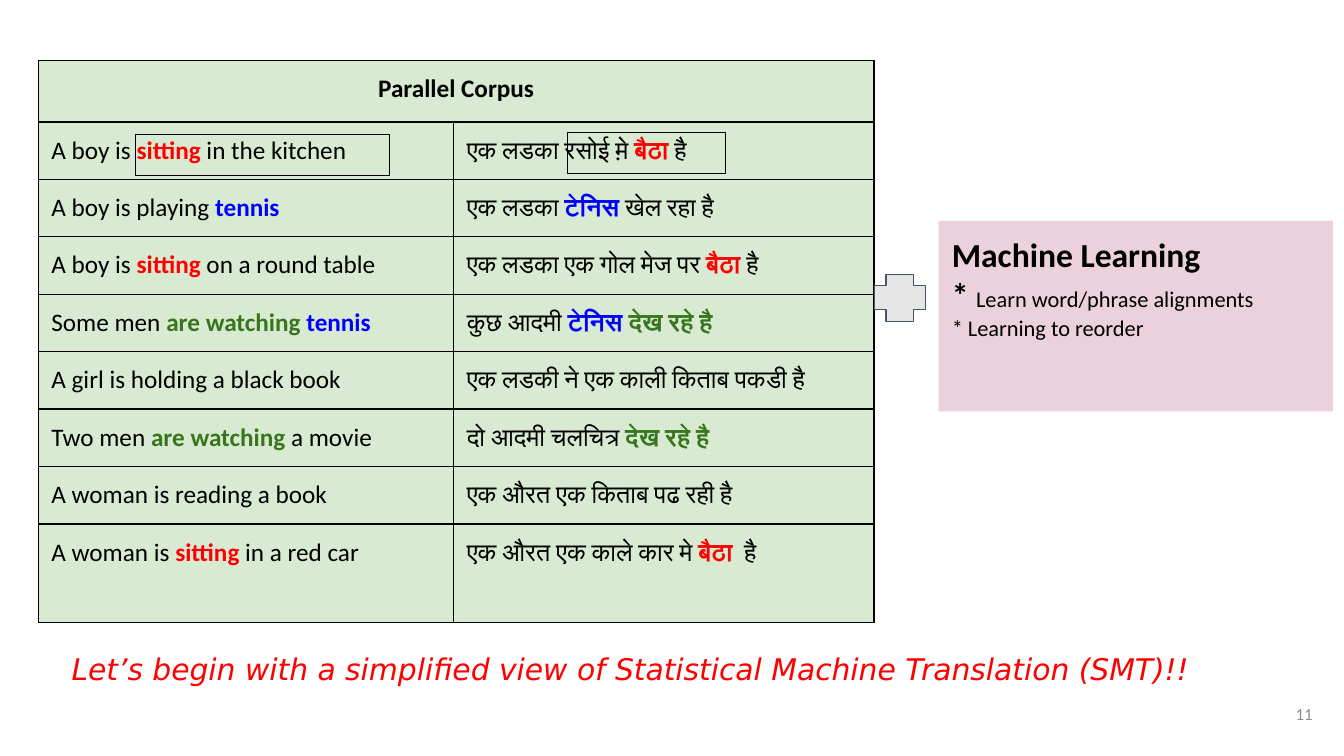
import pptx
import pptx.dml.color
import pptx.enum.shapes
import pptx.enum.text
import pptx.oxml.ns
import pptx.util
from lxml import etree

Inches = pptx.util.Inches
Pt = pptx.util.Pt
RGBColor = pptx.dml.color.RGBColor
Shape = pptx.enum.shapes.MSO_SHAPE
Align = pptx.enum.text.PP_ALIGN
Anchor = pptx.enum.text.MSO_ANCHOR
qn = pptx.oxml.ns.qn

BLACK = RGBColor(0x00, 0x00, 0x00)
RED = RGBColor(0xFF, 0x00, 0x00)
BLUE = RGBColor(0x00, 0x00, 0xFF)
GREEN = RGBColor(0x38, 0x76, 0x1D)
PALE_GREEN = RGBColor(0xD9, 0xEA, 0xD3)
PINK = RGBColor(0xEA, 0xD1, 0xDC)
LIGHT_GRAY = RGBColor(0xE7, 0xE6, 0xE6)
GRAY = RGBColor(0x8C, 0x8C, 0x8C)
SLATE = RGBColor(0x44, 0x54, 0x6A)

ALIGNED_WORDS = {
    "sitting": RED, "बैठा": RED,
    "tennis": BLUE, "टेनिस": BLUE,
    "are watching": GREEN, "देख रहे है": GREEN,
}

CORPUS = [
    ("A boy is |sitting| in the kitchen", "एक लडका रसोई मे़ |बैठा| है"),
    ("A boy is playing |tennis", "एक लडका |टेनिस |खेल रहा है"),
    ("A boy is |sitting| on a round table", "एक लडका एक गोल मेज पर |बैठा| है"),
    ("Some men |are watching |tennis", "कुछ आदमी |टेनिस |देख रहे है"),
    ("A girl is holding a black book", "एक लडकी ने एक काली किताब पकडी है"),
    ("Two men |are watching| a movie", "दो आदमी चलचित्र |देख रहे है"),
    ("A woman is reading a book", "एक औरत एक किताब पढ रही है"),
    ("A woman is |sitting| in a red car", "एक औरत एक काले कार मे |बैठा|  है"),
]


class SlideBuilder:
    font = "Calibri"
    margin = Inches(0.13)
    border_width = Pt(1)

    def __init__(self, deck):
        self.page = deck.slides.add_slide(deck.slide_layouts[6])

    def add_span(self, para, text, size, color=BLACK, bold=False, italic=False, font=None):
        span = para.add_run()
        span.text = text
        span.font.name = font or self.font
        span.font.size = Pt(size)
        span.font.color.rgb = color
        span.font.bold = bold
        span.font.italic = italic
        script_font = etree.SubElement(span.font._element, qn("a:cs"))
        script_font.set("typeface", font or self.font)

    def set_margins(self, holder):
        holder.margin_left = holder.margin_right = self.margin
        holder.margin_top = holder.margin_bottom = self.margin

    def text(self, left, top, width, height, text, size, align=Align.LEFT,
             anchor=Anchor.TOP, **style):
        box = self.page.shapes.add_textbox(
            Inches(left), Inches(top), Inches(width), Inches(height))
        frame = box.text_frame
        frame.word_wrap = True
        frame.vertical_anchor = anchor
        self.set_margins(frame)
        para = frame.paragraphs[0]
        para.alignment = align
        self.add_span(para, text, size, **style)

    def shape(self, kind, left, top, width, height, fill=None, line=None):
        shape = self.page.shapes.add_shape(
            kind, Inches(left), Inches(top), Inches(width), Inches(height))
        shape.shadow.inherit = False
        if fill is None:
            shape.fill.background()
        else:
            shape.fill.solid()
            shape.fill.fore_color.rgb = fill
        if line is None:
            shape.line.fill.background()
        else:
            shape.line.color.rgb = line
            shape.line.width = Pt(0.75)
        return shape

    def panel(self, left, top, width, height, fill, lines):
        frame = self.shape(Shape.RECTANGLE, left, top, width, height, fill).text_frame
        frame.word_wrap = True
        frame.vertical_anchor = Anchor.TOP
        self.set_margins(frame)
        for index, spans in enumerate(lines):
            para = frame.add_paragraph() if index else frame.paragraphs[0]
            para.alignment = Align.LEFT
            for text, size, bold in spans:
                self.add_span(para, text, size, bold=bold)

    def style_cell(self, cell):
        self.set_margins(cell)
        properties = cell._tc.get_or_add_tcPr()
        for side in ("a:lnL", "a:lnR", "a:lnT", "a:lnB"):
            border = etree.SubElement(properties, qn(side), w=str(self.border_width))
            solid = etree.SubElement(border, qn("a:solidFill"))
            etree.SubElement(solid, qn("a:srgbClr"), val=str(BLACK))
        cell.fill.solid()
        cell.fill.fore_color.rgb = PALE_GREEN

    def corpus_table(self, left, top, widths, heights, title, pairs, size):
        table = self.page.shapes.add_table(
            len(heights), len(widths), Inches(left), Inches(top),
            Inches(sum(widths)), Inches(sum(heights))).table
        table.first_row = table.horz_banding = False
        for column, width in zip(table.columns, widths):
            column.width = Inches(width)
        for row, height in zip(table.rows, heights):
            row.height = Inches(height)
        for cell in table.iter_cells():
            self.style_cell(cell)
        header = table.cell(0, 0)
        header.merge(table.cell(0, len(widths) - 1))
        para = header.text_frame.paragraphs[0]
        para.alignment = Align.CENTER
        self.add_span(para, title, size, bold=True)
        for row, pair in enumerate(pairs, 1):
            for column, sentence in enumerate(pair):
                para = table.cell(row, column).text_frame.paragraphs[0]
                for part in sentence.split("|"):
                    color = ALIGNED_WORDS.get(part.strip())
                    self.add_span(para, part, size, color or BLACK, bold=color is not None)


def main():
    deck = pptx.Presentation()
    deck.slide_width = Inches(13.33)
    deck.slide_height = Inches(7.5)
    slide = SlideBuilder(deck)

    slide.text(0.58, 6.33, 12.18, 0.63,
               "Let’s begin with a simplified view of Statistical Machine Translation (SMT)!!",
               21.3, color=RED, italic=True, font="DejaVu Sans")
    slide.corpus_table(0.38, 0.6, [4.12, 4.17], [0.61] + [0.57] * 7 + [0.98],
                       "Parallel Corpus", CORPUS, 18)
    slide.panel(9.31, 2.19, 3.91, 1.89, PINK, [
        [("Machine Learning", 24, True)],
        [("* ", 24, True), ("Learn word/phrase alignments", 16, False)],
        [("* Learning to reorder", 16, False)],
    ])
    plus = slide.shape(Shape.CROSS, 8.67, 2.72, 0.51, 0.47, LIGHT_GRAY, SLATE)
    plus.adjustments[0] = 0.25
    for left, top, width in [(1.34, 1.33, 2.52), (5.63, 1.31, 1.57)]:
        slide.shape(Shape.RECTANGLE, left, top, width, 0.41, line=BLACK)
    slide.text(12.35, 6.8, 0.8, 0.57, "11", 12, Align.RIGHT, Anchor.MIDDLE, color=GRAY)

    deck.save("out.pptx")


if __name__ == "__main__":
    main()
